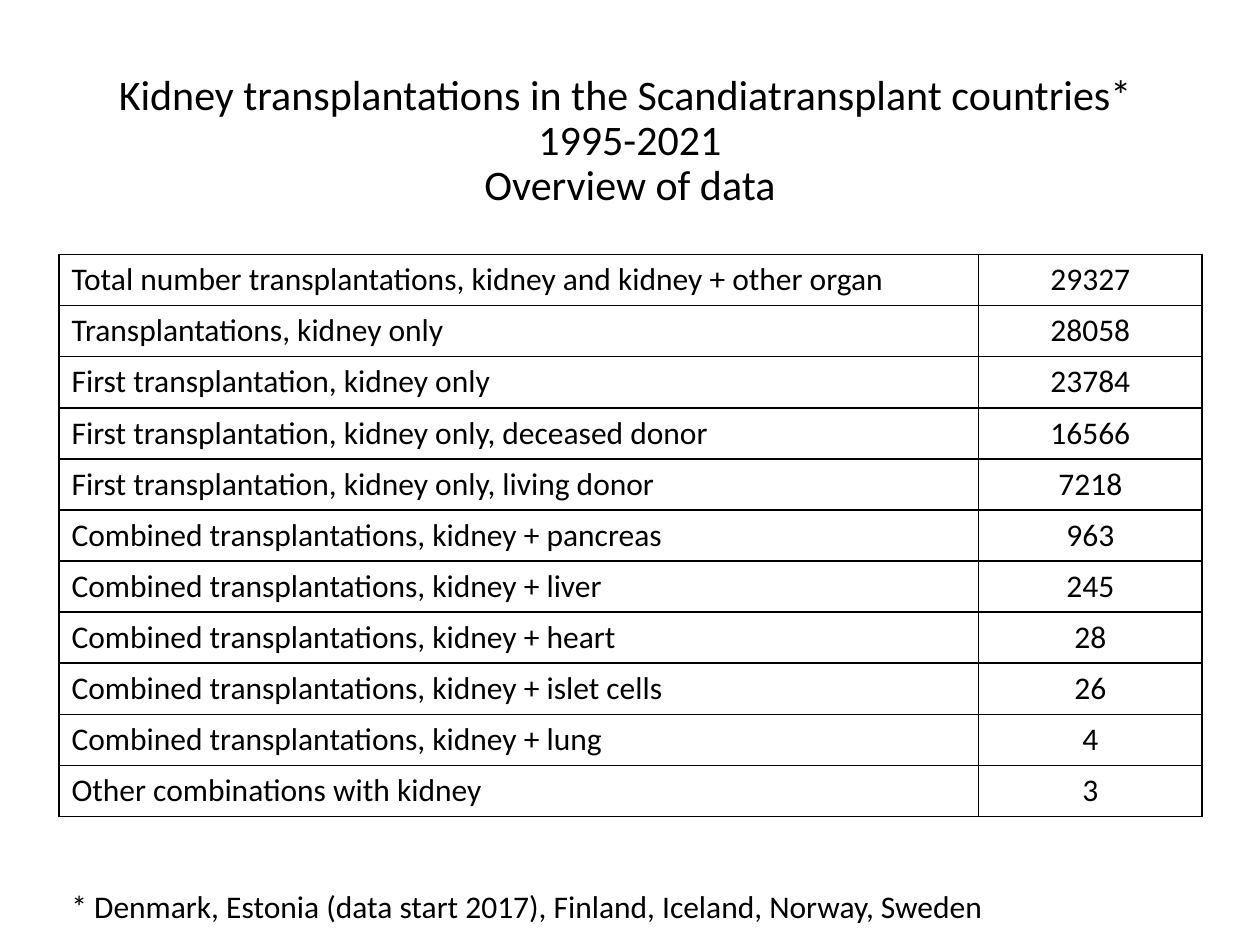
from dataclasses import dataclass

from lxml import etree
from pptx import Presentation
from pptx.dml.color import RGBColor
from pptx.enum import text
from pptx.oxml import ns
from pptx.util import Cm, Pt


@dataclass(frozen=True)
class Theme:
    font: str = "Calibri"
    ink: str = "000000"
    title_size: int = 24
    body_size: int = 18
    border_width: int = 1


TITLE_LINES = [
    "Kidney transplantations in the Scandiatransplant countries* ",
    "1995-2021",
    "Overview of data",
]
TRANSPLANT_COUNTS = [
    ("Total number transplantations, kidney and kidney + other organ", 29327),
    ("Transplantations, kidney only", 28058),
    ("First transplantation, kidney only", 23784),
    ("First transplantation, kidney only, deceased donor", 16566),
    ("First transplantation, kidney only, living donor", 7218),
    ("Combined transplantations, kidney + pancreas", 963),
    ("Combined transplantations, kidney + liver", 245),
    ("Combined transplantations, kidney + heart", 28),
    ("Combined transplantations, kidney + islet cells", 26),
    ("Combined transplantations, kidney + lung", 4),
    ("Other combinations with kidney", 3),
]
COUNTRIES_NOTE = "* Denmark, Estonia (data start 2017), Finland, Iceland, Norway, Sweden"


class SlideBuilder:
    def __init__(self, slide, theme):
        self.slide = slide
        self.theme = theme

    def add_words(self, paragraph, words, size):
        run = paragraph.add_run()
        run.text = words
        run.font.name = self.theme.font
        run.font.size = Pt(size)
        run.font.color.rgb = RGBColor.from_string(self.theme.ink)

    def title(self, lines, left, top, width, height):
        heading = self.slide.shapes.title
        heading.left, heading.top = Cm(left), Cm(top)
        heading.width, heading.height = Cm(width), Cm(height)
        frame = heading.text_frame
        frame.auto_size = text.MSO_AUTO_SIZE.NONE
        frame.vertical_anchor = text.MSO_ANCHOR.MIDDLE
        paragraph = frame.paragraphs[0]
        paragraph.alignment = text.PP_ALIGN.CENTER
        paragraph.line_spacing = 0.9
        for index, line in enumerate(lines):
            if index:
                paragraph.add_line_break()
            self.add_words(paragraph, line, self.theme.title_size)

    def note(self, words, left, top, width, height):
        box = self.slide.shapes.add_textbox(Cm(left), Cm(top), Cm(width), Cm(height))
        box.text_frame.word_wrap = False
        box.text_frame.auto_size = text.MSO_AUTO_SIZE.SHAPE_TO_FIT_TEXT
        self.add_words(box.text_frame.paragraphs[0], words, self.theme.body_size)

    def border(self, cell):
        properties = cell._tc.get_or_add_tcPr()
        for side in ("a:lnL", "a:lnR", "a:lnT", "a:lnB"):
            line = etree.SubElement(properties, ns.qn(side), w=str(Pt(self.theme.border_width)))
            fill = etree.SubElement(line, ns.qn("a:solidFill"))
            etree.SubElement(fill, ns.qn("a:srgbClr"), val=self.theme.ink)

    def table(self, rows, left, top, column_widths, row_height):
        """Draw a bordered grid: labels to the left, figures centred."""
        table = self.slide.shapes.add_table(
            len(rows), len(column_widths), Cm(left), Cm(top),
            Cm(sum(column_widths)), Cm(row_height * len(rows))).table
        table.first_row = table.horz_banding = False
        for column, width in zip(table.columns, column_widths):
            column.width = Cm(width)
        alignments = (text.PP_ALIGN.LEFT, text.PP_ALIGN.CENTER)
        for row, values in zip(table.rows, rows):
            row.height = Cm(row_height)
            for cell, value, alignment in zip(row.cells, values, alignments):
                self.border(cell)
                cell.fill.background()
                paragraph = cell.text_frame.paragraphs[0]
                paragraph.alignment = alignment
                self.add_words(paragraph, str(value), self.theme.body_size)


def main():
    deck = Presentation()
    deck.slide_width, deck.slide_height = Cm(25.4), Cm(19.05)
    title_only = deck.slide_layouts[5]
    overview = SlideBuilder(deck.slides.add_slide(title_only), Theme())
    overview.title(TITLE_LINES, 1.75, 1.02, 21.9, 3.68)
    overview.note(COUNTRIES_NOTE, 1.19, 17.75, 19.1, 1.03)
    overview.table(TRANSPLANT_COUNTS, 1.19, 5.13, (18.54, 4.5), 1.03)
    deck.save("out.pptx")


if __name__ == "__main__":
    main()
